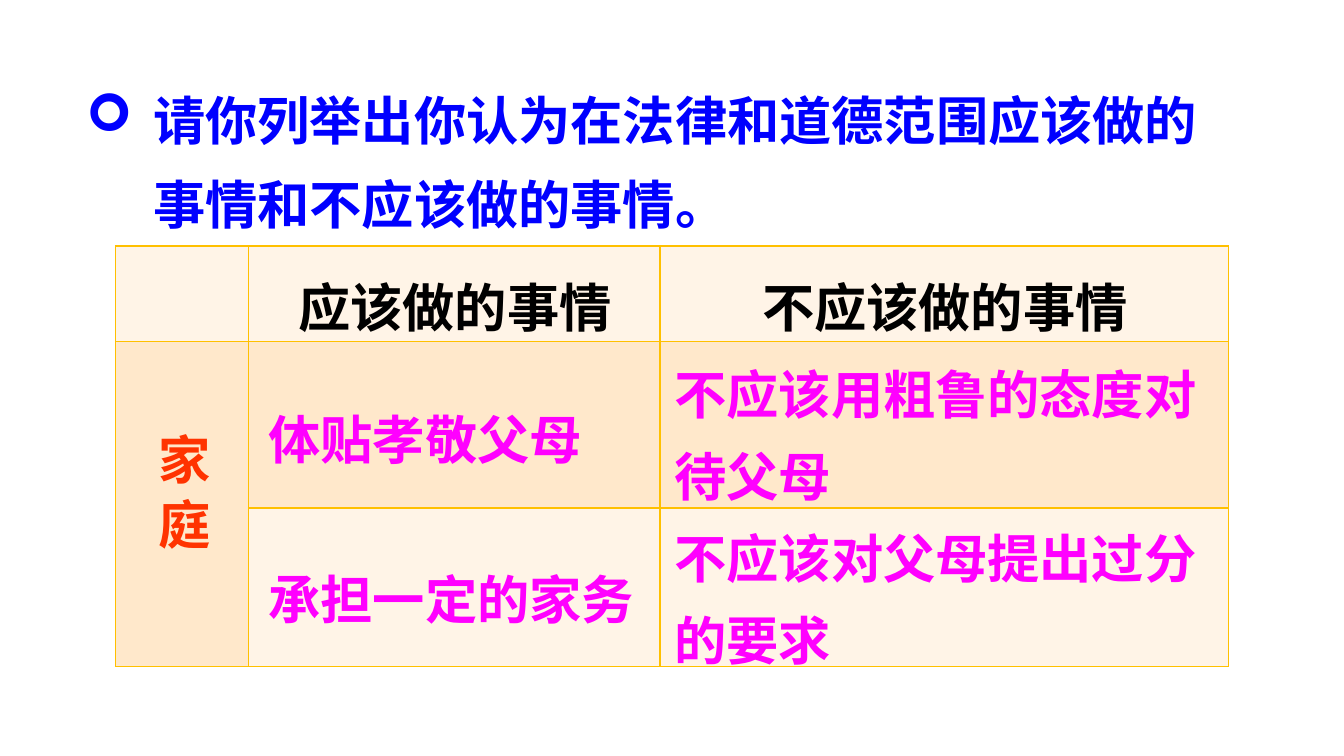
from lxml import etree
from pptx import Presentation
from pptx import util as u
from pptx.dml.color import RGBColor
from pptx.enum import text
from pptx.oxml.ns import qn

FONT = "Noto Sans CJK SC"
COLORS = {
    "question": "0000FF", "header": "000000", "group": "FF3300", "answer": "FF00FF",
    "light": "FFF4E7", "dark": "FFE8CB", "border": "FFC000",
}


def write(shape, content, color, align, spacing):
    """Put one bold paragraph into a shape."""
    frame = shape.text_frame
    frame.word_wrap = True
    frame.auto_size = text.MSO_AUTO_SIZE.NONE
    frame.vertical_anchor = text.MSO_ANCHOR.TOP
    frame.text = content
    paragraph = frame.paragraphs[0]
    paragraph.alignment = align
    paragraph.line_spacing = spacing
    properties = paragraph._p.get_or_add_pPr()
    if shape.is_placeholder:
        properties.set("marL", str(u.Inches(0.5)))
        properties.set("indent", str(u.Inches(-0.5)))
        etree.SubElement(properties, qn("a:buFont")).set("typeface", "Wingdings")
        etree.SubElement(properties, qn("a:buChar")).set("char", "➢")
    font = paragraph.font
    font.size = u.Pt(28)
    font.bold = True
    font.color.rgb = RGBColor.from_string(COLORS[color])
    font.name = FONT
    # East Asian typeface follows the Latin one
    latin = properties.find(qn("a:defRPr")).find(qn("a:latin"))
    east_asian = etree.Element(qn("a:ea"))
    east_asian.set("typeface", FONT)
    latin.addnext(east_asian)


def add_borders(cell):
    """Draw all four borders ahead of the cell's fill."""
    properties = cell._tc.get_or_add_tcPr()
    for index, side in enumerate(("lnL", "lnR", "lnT", "lnB")):
        line = etree.Element(qn(f"a:{side}"))
        line.set("w", str(u.Pt(1)))
        fill = etree.SubElement(line, qn("a:solidFill"))
        etree.SubElement(fill, qn("a:srgbClr")).set("val", COLORS["border"])
        properties.insert(index, line)


# Widescreen 16:9 slide
presentation = Presentation()
presentation.slide_width = u.Inches(10)
presentation.slide_height = u.Inches(10 * 9 / 16)
slide = presentation.slides.add_slide(presentation.slide_layouts[5])
LEFT, CENTER = text.PP_ALIGN.LEFT, text.PP_ALIGN.CENTER

# Question
title = slide.shapes.title
title.left, title.top = u.Inches(0.54), u.Inches(0.44)
title.width, title.height = u.Inches(8.62), u.Inches(1.28)
write(title, "请你列举出你认为在法律和道德范围应该做的事情和不应该做的事情。",
      "question", LEFT, 1.35)

# Table grid
column_widths = (0.99, 3.06, 4.23)
row_heights = (0.71, 1.24, 1.18)
table = slide.shapes.add_table(
    3, 3, u.Inches(0.86), u.Inches(1.83),
    u.Inches(sum(column_widths)), u.Inches(sum(row_heights))).table
for column, width in zip(table.columns, column_widths):
    column.width = u.Inches(width)
for index, (row, height) in enumerate(zip(table.rows, row_heights)):
    row.height = u.Inches(height)
    for cell in row.cells:
        cell.fill.solid()
        cell.fill.fore_color.rgb = RGBColor.from_string(COLORS["dark" if index == 1 else "light"])
        add_borders(cell)
table.cell(1, 0).merge(table.cell(2, 0))

# Labels and answers over the grid
labels = [
    ("应该做的事情", 1.96, 1.86, 2.85, 0.63, "header", CENTER),
    ("不应该做的事情", 4.92, 1.86, 4.22, 0.63, "header", CENTER),
    ("家 庭", 1.05, 3.13, 0.73, 1.29, "group", CENTER),
    ("体贴孝敬父母", 1.9, 2.84, 2.64, 0.63, "answer", LEFT),
    ("承担一定的家务", 1.9, 4.03, 3.06, 0.63, "answer", LEFT),
    ("不应该用粗鲁的态度对待父母", 4.92, 2.51, 4.22, 1.24, "answer", LEFT),
    ("不应该对父母提出过分的要求", 4.92, 3.73, 4.22, 1.24, "answer", LEFT),
]
for content, left, top, width, height, color, align in labels:
    box = slide.shapes.add_textbox(
        u.Inches(left), u.Inches(top), u.Inches(width), u.Inches(height))
    write(box, content, color, align, 1.3)
    if color == "group":
        box.text_frame._txBody.bodyPr.set("vert", "eaVert")

presentation.save("out.pptx")
